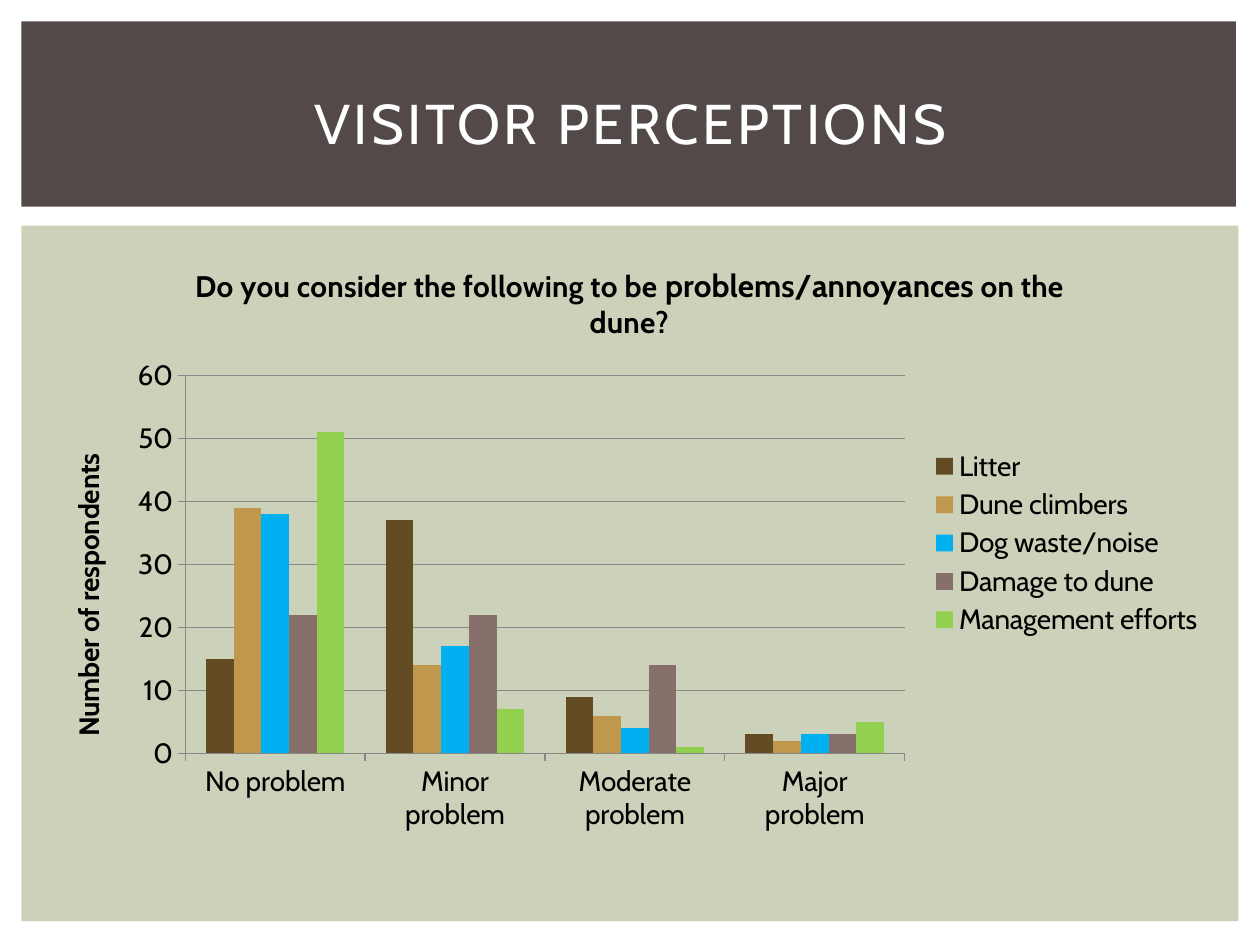
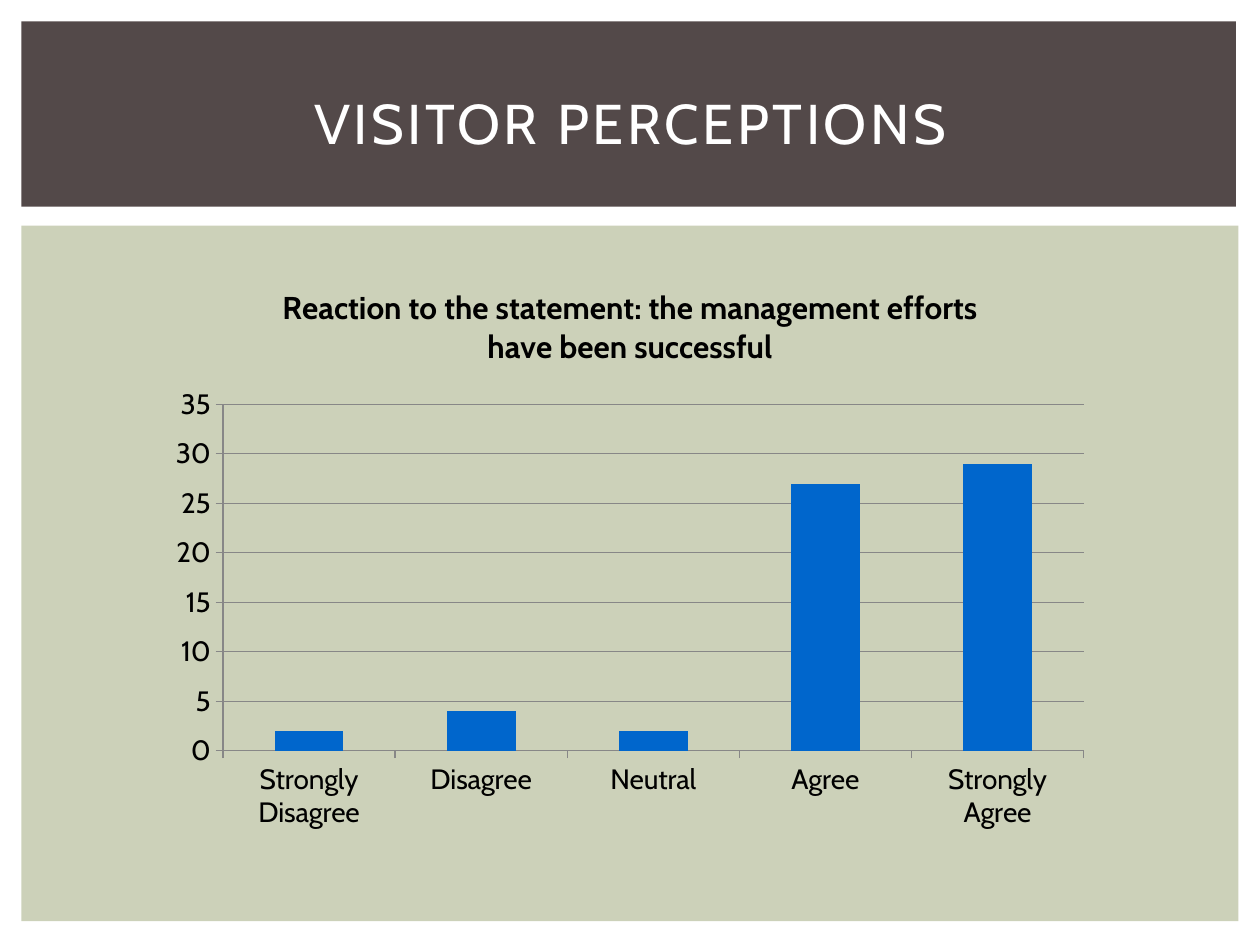
import pptx
import pptx.chart.data
import pptx.dml.color
import pptx.enum.chart
import pptx.enum.shapes
import pptx.enum.text
import pptx.oxml
import pptx.oxml.ns
import pptx.util
from pptx.util import Inches

COLORS = {
    "band": "534949", "panel": "CCD1B9", "title": "FFFFFF", "text": "000000",
    "grid": "878787", "brown": "634C23", "tan": "BF974D", "sky": "00B0F0",
    "mauve": "87706B", "green": "92D050", "blue": "0066CC",
}
FONT = "Cabin"
LABEL_SIZE = 16
BACKDROP = [("panel", (0.17, 1.79, 9.66, 5.52)), ("band", (0.17, 0.17, 9.64, 1.47))]
TITLE_PLACE = (0.42, 0.39, 9.17, 1.15)

SLIDES = [
    {
        "title": "VISITOR PERCEPTIONS",
        "question": [("Do you consider the following to be ", 17),
                     ("problems/annoyances", 18), (" on the dune?", 17)],
        "place": (0.33, 1.92, 9.33, 4.78),
        "plot": (1.47, 2.98, 5.71, 3.0),
        "value_title": "Number of respondents",
        "legend": True,
        "top": 60, "step": 10,
        "answers": ["No problem", "Minor problem", "Moderate problem", "Major problem"],
        "series": [
            ("Litter", "brown", (15, 37, 9, 3)),
            ("Dune climbers", "tan", (39, 14, 6, 2)),
            ("Dog waste/noise", "sky", (38, 17, 4, 3)),
            ("Damage to dune", "mauve", (22, 22, 14, 3)),
            ("Management efforts", "green", (51, 7, 1, 5)),
        ],
    },
    {
        "title": "VISITOR PERCEPTIONS",
        "question": [("Reaction to the statement: the management efforts have been successful", 18)],
        "place": (1.25, 2.08, 7.5, 4.58),
        "plot": (1.77, 3.21, 6.83, 2.75),
        "value_title": None,
        "legend": False,
        "top": 35, "step": 5,
        "answers": ["Strongly Disagree", "Disagree", "Neutral", "Agree", "Strongly Agree"],
        "series": [("Series 1", "blue", (2, 4, 2, 27, 29))],
    },
]


def rgb(name):
    return pptx.dml.color.RGBColor.from_string(COLORS[name])


def style_font(font, size, color="text", bold=False):
    font.name = FONT
    font.size = pptx.util.Pt(size)
    font.bold = bold
    font.color.rgb = rgb(color)


def add_span(para, text, size, color="text", bold=False):
    span = para.add_run()
    span.text = text
    style_font(span.font, size, color, bold)
    return span


def add_backdrop(page, title):
    for color, place in BACKDROP:
        shape = page.shapes.add_shape(
            pptx.enum.shapes.MSO_SHAPE.RECTANGLE, *map(Inches, place))
        shape.shadow.inherit = False
        shape.fill.solid()
        shape.fill.fore_color.rgb = rgb(color)
        shape.line.fill.background()
    frame = page.shapes.add_textbox(*map(Inches, TITLE_PLACE)).text_frame
    frame.word_wrap = True
    frame.vertical_anchor = pptx.enum.text.MSO_ANCHOR.MIDDLE
    para = frame.paragraphs[0]
    para.alignment = pptx.enum.text.PP_ALIGN.CENTER
    span = add_span(para, title, 32, "title")
    span.font._element.set("spc", "200")


def style_axis(axis):
    axis.major_tick_mark = pptx.enum.chart.XL_TICK_MARK.OUTSIDE
    axis.minor_tick_mark = pptx.enum.chart.XL_TICK_MARK.NONE
    style_font(axis.tick_labels.font, LABEL_SIZE)
    style_line(axis.format.line)


def style_line(line):
    line.color.rgb = rgb("grid")
    line.width = pptx.util.Pt(0.75)


def place_plot(chart, place, plot):
    left, top, width, height = place
    shares = {"x": (plot[0] - left) / width, "y": (plot[1] - top) / height,
              "w": plot[2] / width, "h": plot[3] / height}
    area = chart._chartSpace.chart.plotArea
    for old in area.findall(pptx.oxml.ns.qn("c:layout")):
        area.remove(old)
    modes = '<c:layoutTarget val="inner"/><c:xMode val="edge"/><c:yMode val="edge"/>'
    values = "".join(f'<c:{key} val="{share:.4f}"/>' for key, share in shares.items())
    area.insert(0, pptx.oxml.parse_xml(
        f'<c:layout {pptx.oxml.ns.nsdecls("c")}><c:manualLayout>'
        f'{modes}{values}</c:manualLayout></c:layout>'))


def add_bar_chart(page, content):
    data = pptx.chart.data.CategoryChartData()
    data.categories = content["answers"]
    for name, color, values in content["series"]:
        data.add_series(name, values)
    chart = page.shapes.add_chart(
        pptx.enum.chart.XL_CHART_TYPE.COLUMN_CLUSTERED,
        *map(Inches, content["place"]), data).chart
    style_font(chart.font, 10)
    chart.has_title = True
    for text, size in content["question"]:
        add_span(chart.chart_title.text_frame.paragraphs[0], text, size, bold=True)
    chart.chart_title.include_in_layout = False

    bars = chart.plots[0]
    bars.gap_width = 150
    bars.vary_by_categories = False
    for series, (name, color, values) in zip(bars.series, content["series"]):
        series.format.fill.solid()
        series.format.fill.fore_color.rgb = rgb(color)

    for axis in (chart.category_axis, chart.value_axis):
        style_axis(axis)
    scale = chart.value_axis
    scale.minimum_scale = 0
    scale.maximum_scale = content["top"]
    scale.major_unit = content["step"]
    scale.has_major_gridlines = True
    style_line(scale.major_gridlines.format.line)
    if content["value_title"]:
        para = scale.axis_title.text_frame.paragraphs[0]
        add_span(para, content["value_title"], LABEL_SIZE, bold=True)

    chart.has_legend = content["legend"]
    if content["legend"]:
        chart.legend.position = pptx.enum.chart.XL_LEGEND_POSITION.RIGHT
        chart.legend.include_in_layout = False
        style_font(chart.legend.font, LABEL_SIZE)
    place_plot(chart, content["place"], content["plot"])


def main():
    deck = pptx.Presentation()
    deck.slide_width = Inches(10)
    deck.slide_height = Inches(7.5)
    for content in SLIDES:
        page = deck.slides.add_slide(deck.slide_layouts[6])
        add_backdrop(page, content["title"])
        add_bar_chart(page, content)
    deck.save("out.pptx")


if __name__ == "__main__":
    main()
